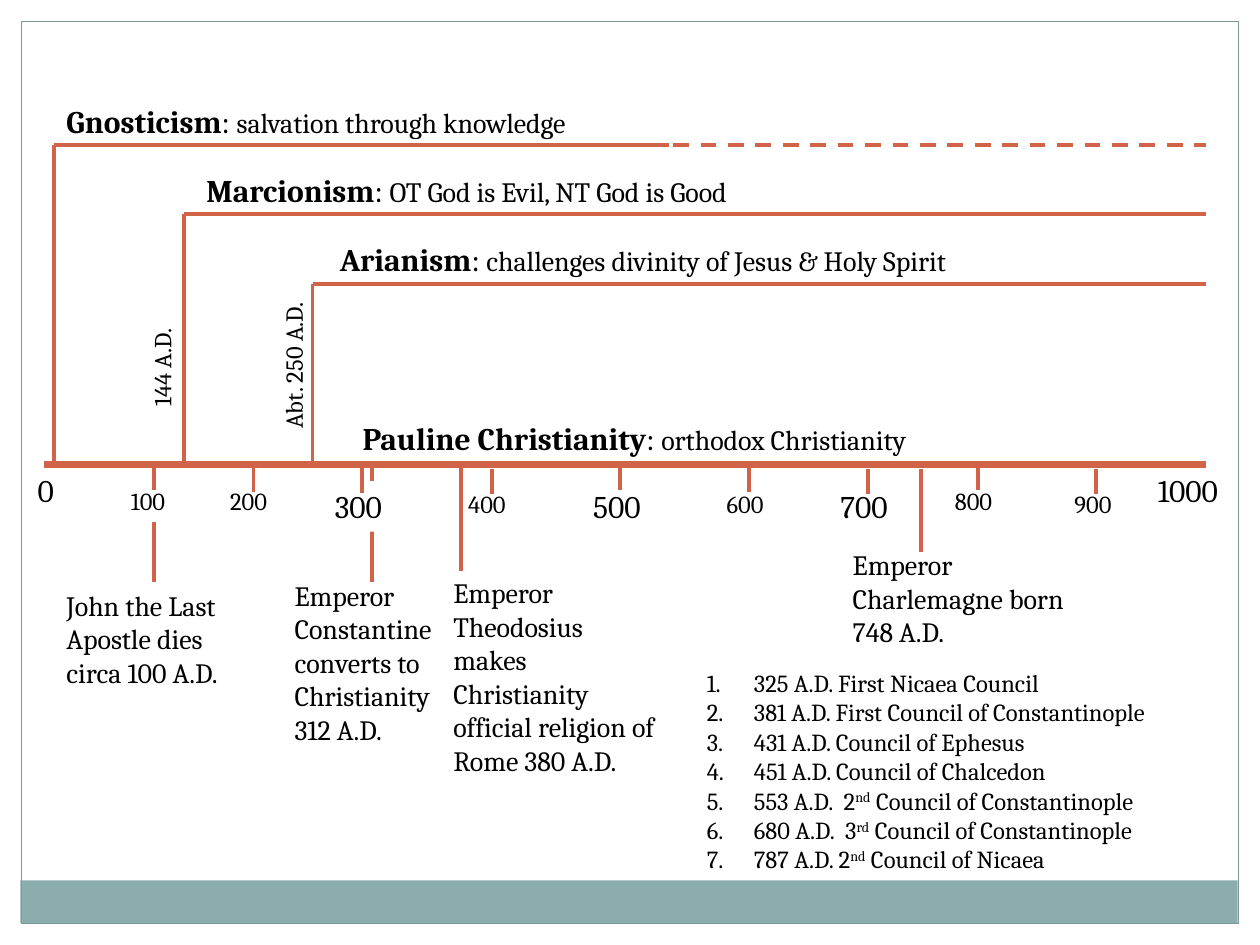
from typing import NamedTuple, Optional

from lxml.etree import SubElement
from pptx import Presentation
from pptx.dml.color import RGBColor
from pptx.enum.dml import MSO_LINE
from pptx.enum.shapes import MSO_CONNECTOR, MSO_SHAPE
from pptx.enum.text import MSO_AUTO_SIZE
from pptx.oxml.ns import qn
from pptx.util import Cm, Pt

ORANGE = "D16349"
TEAL = "8CADAE"
FRAME = "7C999A"
WHITE = "FFFFFF"
BLACK = "000000"
AXIS_LEFT, AXIS_RIGHT, AXIS_Y = 0.89, 24.31, 9.37
TICK_LENGTH = 0.51


class Movement(NamedTuple):
    name: str
    belief: str
    start: float
    line_y: float
    solid_end: float
    label_left: float
    label_top: float
    label_width: float


class Century(NamedTuple):
    year: int
    tick_x: float
    tick_top: float
    label_left: float
    label_top: float
    major: bool = False
    fill: Optional[str] = None


class Event(NamedTuple):
    text: str
    leader_x: float
    leader_top: float
    leader_bottom: float
    left: float
    top: float
    width: float
    height: float


class Council(NamedTuple):
    start: str
    ordinal: str = ""
    rest: str = ""


MOVEMENTS = [
    Movement("Gnosticism", "salvation through knowledge", 1.09, 2.92, 13.49, 1.09, 1.93, 12.67),
    Movement("Marcionism", "OT God is Evil, NT God is Good", 3.71, 4.32, AXIS_RIGHT, 3.91, 3.33, 13.21),
    Movement("Arianism", "challenges divinity of Jesus & Holy Spirit", 6.3, 5.72, AXIS_RIGHT, 6.6, 4.72, 15.49),
    Movement("Pauline Christianity", "orthodox Christianity", AXIS_LEFT, AXIS_Y, AXIS_RIGHT, 7.06, 8.33, 15.65),
]
CENTURIES = [
    Century(100, 3.1, 9.37, 2.39, 9.68),
    Century(200, 5.11, 9.4, 4.39, 9.68),
    Century(300, 7.29, 9.42, 6.5, 9.7, True, WHITE),
    Century(400, 9.91, 9.45, 9.19, 9.73),
    Century(500, 12.5, 9.37, 11.71, 9.7, True),
    Century(600, 15.09, 9.4, 14.4, 9.73),
    Century(700, 17.5, 9.45, 16.69, 9.7, True),
    Century(800, 19.71, 9.37, 19, 9.68),
    Century(900, 22.1, 9.45, 21.41, 9.73),
]
EVENTS = [
    Event("John the Last Apostle dies circa 100 A.D.", 3.1, 10.52, 11.73, 1.09, 11.73, 4.39, 2.31),
    Event("Emperor Constantine converts to Christianity 312 A.D.", 7.49, 9.37, 11.73, 5.69, 11.53, 3.99, 3.68),
    Event("Emperor Theodosius makes Christianity official religion of Rome 380 A.D.",
          9.3, 9.42, 11.51, 8.89, 11.48, 4.57, 5.05),
    Event("Emperor Charlemagne born 748 A.D.", 18.57, 9.45, 11.13, 16.94, 10.92, 5.36, 2.31),
]
COUNCILS = [
    Council("325 A.D. First Nicaea Council"),
    Council("381 A.D. First Council of Constantinople"),
    Council("431 A.D. Council of Ephesus"),
    Council("451 A.D. Council of Chalcedon"),
    Council("553 A.D.  2", "nd", " Council of Constantinople"),
    Council("680 A.D.  3", "rd", " Council of Constantinople"),
    Council("787 A.D. 2", "nd", " Council of Nicaea"),
]


def color(value: str) -> RGBColor:
    return RGBColor.from_string(value)


def add_span(para, text: str, size: float = 16, bold: bool = False, raised: bool = False) -> None:
    span = para.add_run()
    span.text = text
    span.font.name = "Cambria"
    span.font.size = Pt(size)
    span.font.bold = bold
    span.font.color.rgb = color(BLACK)
    if raised:
        span.font._element.set("baseline", "30000")


def add_box(page, left: float, top: float, width: float, height: float,
            rotation: float = 0, fill: Optional[str] = None):
    box = page.shapes.add_textbox(Cm(left), Cm(top), Cm(width), Cm(height))
    box.rotation = rotation
    if fill:
        box.fill.solid()
        box.fill.fore_color.rgb = color(fill)
    box.text_frame.word_wrap = True
    box.text_frame.auto_size = MSO_AUTO_SIZE.SHAPE_TO_FIT_TEXT
    return box


def add_label(page, text: str, left: float, top: float, width: float, height: float,
              size: float = 16, rotation: float = 0, fill: Optional[str] = None) -> None:
    box = add_box(page, left, top, width, height, rotation, fill)
    add_span(box.text_frame.paragraphs[0], text, size=size)


def add_line(page, x1: float, y1: float, x2: float, y2: float,
             weight: float = 2.25, dashed: bool = False) -> None:
    line = page.shapes.add_connector(MSO_CONNECTOR.STRAIGHT, Cm(x1), Cm(y1), Cm(x2), Cm(y2))
    line.line.color.rgb = color(ORANGE)
    line.line.width = Pt(weight)
    if dashed:
        line.line.dash_style = MSO_LINE.DASH
    SubElement(line._element.spPr, qn("a:effectLst"))


def add_background(page) -> None:
    band = page.shapes.add_shape(MSO_SHAPE.RECTANGLE, Cm(0.41), Cm(17.75), Cm(24.54), Cm(0.86))
    band.fill.solid()
    band.fill.fore_color.rgb = color(TEAL)
    band.line.fill.background()
    frame = page.shapes.add_shape(MSO_SHAPE.RECTANGLE, Cm(0.43), Cm(0.43), Cm(24.54), Cm(18.19))
    frame.fill.background()
    frame.line.color.rgb = color(FRAME)
    frame.line.width = Pt(0.75)
    for shape in (band, frame):
        shape.shadow.inherit = False


def add_movement(page, movement: Movement) -> None:
    on_axis = movement.line_y == AXIS_Y
    add_line(page, movement.start, movement.line_y, movement.solid_end, movement.line_y,
             weight=4 if on_axis else 2.25)
    if not on_axis:
        add_line(page, movement.start, movement.line_y, movement.start, AXIS_Y)
    if movement.solid_end < AXIS_RIGHT:
        add_line(page, 11.91, movement.line_y, AXIS_RIGHT, movement.line_y, dashed=True)
    box = add_box(page, movement.label_left, movement.label_top, movement.label_width, 1.02)
    para = box.text_frame.paragraphs[0]
    add_span(para, movement.name, size=18, bold=True)
    add_span(para, ": ", size=18)
    add_span(para, movement.belief)


def add_century(page, century: Century) -> None:
    width, height, size = (1.8, 1.02, 18) if century.major else (1.5, 0.86, 14)
    add_label(page, str(century.year), century.label_left, century.label_top, width, height,
              size=size, fill=century.fill)
    add_line(page, century.tick_x, century.tick_top, century.tick_x, century.tick_top + TICK_LENGTH)


def add_councils(page) -> None:
    frame = add_box(page, 14, 13.34, 10.9, 4.45).text_frame
    for index, council in enumerate(COUNCILS):
        para = frame.add_paragraph() if index else frame.paragraphs[0]
        properties = para._p.get_or_add_pPr()
        properties.set("marL", str(Cm(0.95)))
        properties.set("indent", str(-Cm(0.95)))
        SubElement(properties, qn("a:buFont"), typeface="+mj-lt")
        SubElement(properties, qn("a:buAutoNum"), type="arabicPeriod")
        add_span(para, council.start, size=14)
        if council.ordinal:
            add_span(para, council.ordinal, size=14, raised=True)
            add_span(para, council.rest, size=14)


def main() -> None:
    deck = Presentation()
    deck.slide_width, deck.slide_height = Cm(25.4), Cm(19.05)
    page = deck.slides.add_slide(deck.slide_layouts[6])
    add_background(page)
    for event in EVENTS:
        add_line(page, event.leader_x, event.leader_top, event.leader_x, event.leader_bottom)
        add_label(page, event.text, event.left, event.top, event.width, event.height)
    for movement in MOVEMENTS:
        add_movement(page, movement)
    for century in CENTURIES:
        add_century(page, century)
    add_label(page, "0", 0.51, AXIS_Y, 0.99, 1.02, size=18)
    add_label(page, "1000", 23.09, AXIS_Y, 2.11, 1.02, size=18)
    add_label(page, "144 A.D.", 1.93, 6.68, 2.67, 0.86, size=14, rotation=270)
    add_label(page, "Abt. 250 A.D.", 3.94, 6.48, 3.96, 0.86, size=14, rotation=270)
    add_councils(page)
    deck.save("out.pptx")


if __name__ == "__main__":
    main()
